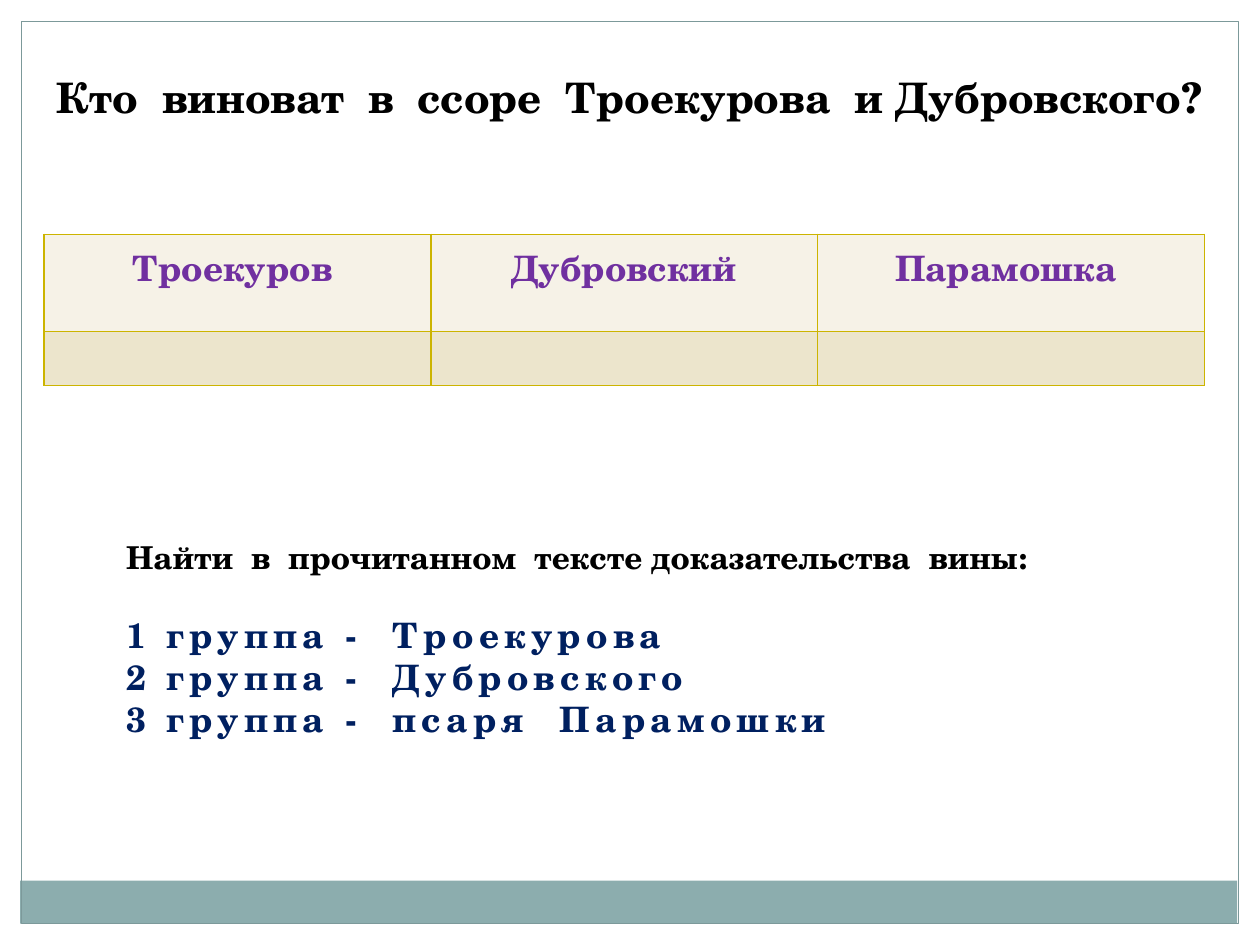
from lxml.etree import SubElement
from pptx import Presentation
from pptx.dml.color import RGBColor
from pptx.enum.shapes import MSO_SHAPE
from pptx.enum.text import MSO_ANCHOR, MSO_AUTO_SIZE, PP_ALIGN
from pptx.oxml.ns import qn
from pptx.util import Inches, Pt

FONT = "TeX Gyre Schola"
COLORS = {
    "margin": "FFFFFF",
    "band": "8CADAE",
    "frame": "7C999A",
    "text": "000000",
    "groups": "002060",
    "header_text": "7030A0",
    "header_fill": "F6F2E7",
    "row_fill": "ECE5CC",
    "border": "CCB400",
}
MARGIN = 0.17
SUSPECTS = ["Троекуров ", "Дубровский", "Парамошка "]
TASK = "Найти  в  прочитанном  тексте доказательства  вины:"
GROUPS = ["Троекурова", "Дубровского", "псаря  Парамошки"]


def color(key):
    return RGBColor.from_string(COLORS[key])


def place(shape, left, top, width, height):
    shape.left, shape.top = Inches(left), Inches(top)
    shape.width, shape.height = Inches(width), Inches(height)


def format_paragraph(paragraph, size, key, align=PP_ALIGN.LEFT, spacing=0):
    paragraph.alignment = align
    for run in paragraph.runs:
        run.font.name = FONT
        run.font.size = Pt(size)
        run.font.bold = True
        run.font.color.rgb = color(key)
        if spacing:
            run.font._element.set("spc", str(spacing * 100))


def prepare_frame(text_frame):
    text_frame.word_wrap = False
    text_frame.auto_size = MSO_AUTO_SIZE.SHAPE_TO_FIT_TEXT
    text_frame.vertical_anchor = MSO_ANCHOR.TOP


def add_rectangle(slide, left, top, width, height, fill=None, line=None):
    rectangle = slide.shapes.add_shape(
        MSO_SHAPE.RECTANGLE, Inches(left), Inches(top), Inches(width), Inches(height))
    rectangle.shadow.inherit = False
    if fill:
        rectangle.fill.solid()
        rectangle.fill.fore_color.rgb = color(fill)
    else:
        rectangle.fill.background()
    if line:
        rectangle.line.color.rgb = color(line)
        rectangle.line.width = Pt(0.75)
    else:
        rectangle.line.fill.background()


def fill_title(title):
    place(title, 0.35, 0.52, 9.34, 0.5)
    prepare_frame(title.text_frame)
    title.text_frame.text = "Кто  виноват  в  ссоре  Троекурова  и Дубровского?"
    format_paragraph(title.text_frame.paragraphs[0], 24, "text")


def fill_task(body):
    place(body, 0.9, 4.22, 7.48, 1.72)
    prepare_frame(body.text_frame)
    groups = [f"{number} группа -  {name}" for number, name in enumerate(GROUPS, 1)]
    body.text_frame.text = "\n".join([TASK, *groups])
    for index, paragraph in enumerate(body.text_frame.paragraphs):
        # No bullet or hanging indent; a gap separates the task from the groups
        properties = paragraph._p.get_or_add_pPr()
        properties.set("marL", "0")
        properties.set("indent", "0")
        paragraph.space_before = Pt(21.6 if index == 1 else 0)
        SubElement(properties, qn("a:buNone"))
        if index == 0:
            format_paragraph(paragraph, 18, "text")
        else:
            format_paragraph(paragraph, 20, "groups", spacing=3)


def style_cell(cell, fill):
    properties = cell._tc.get_or_add_tcPr()
    for side in ("a:lnL", "a:lnR", "a:lnT", "a:lnB"):
        border = SubElement(properties, qn(side), w=str(Pt(1)))
        solid = SubElement(border, qn("a:solidFill"))
        SubElement(solid, qn("a:srgbClr"), val=COLORS["border"])
    cell.fill.solid()
    cell.fill.fore_color.rgb = color(fill)


def add_suspects_table(slide):
    heights = [0.77, 0.43]
    table = slide.shapes.add_table(
        len(heights), len(SUSPECTS), Inches(0.35), Inches(1.86),
        Inches(9.21), Inches(sum(heights))).table
    for row, height in zip(table.rows, heights):
        row.height = Inches(height)
    for column, suspect in enumerate(SUSPECTS):
        header = table.cell(0, column)
        header.text_frame.text = suspect
        format_paragraph(header.text_frame.paragraphs[0], 20, "header_text", PP_ALIGN.CENTER)
        style_cell(header, "header_fill")
        style_cell(table.cell(1, column), "row_fill")


def main():
    presentation = Presentation()
    presentation.slide_width, presentation.slide_height = Inches(10), Inches(7.5)
    slide = presentation.slides.add_slide(presentation.slide_layouts[1])

    # White page margins: top, right, left
    add_rectangle(slide, 0, 0, 10, MARGIN, fill="margin")
    for left in (10 - MARGIN, 0):
        add_rectangle(slide, left, 0, MARGIN, 7.5, fill="margin")

    # Bottom band and page frame
    add_rectangle(slide, 0.16, 6.99, 9.66, 0.34, fill="band")
    add_rectangle(slide, MARGIN, MARGIN, 9.66, 7.16, line="frame")

    # Question, suspects and group work
    fill_title(slide.shapes.title)
    add_suspects_table(slide)
    fill_task(slide.placeholders[1])

    presentation.save("out.pptx")


if __name__ == "__main__":
    main()
